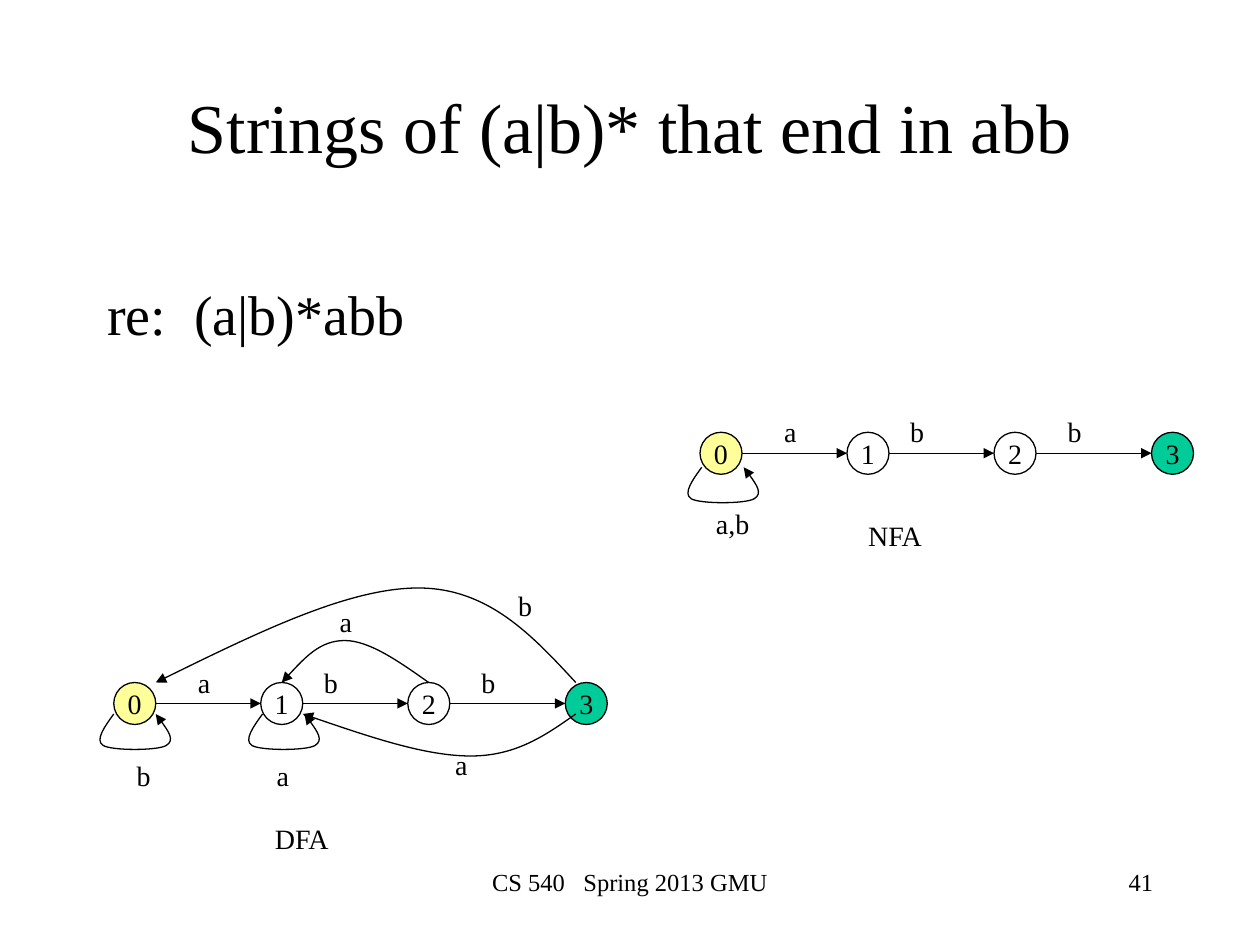
from lxml import etree
from pptx import Presentation
from pptx.dml.color import RGBColor
from pptx.enum import shapes, text
from pptx.oxml.ns import qn
from pptx.util import Pt

FONT = "Times New Roman"
STEPS = (0, 84, 168, 258)  # left edge of each state
SIZE = 24                  # diameter of a state
FILLS = ("FFFF99", None, None, "00CC99")
LOOP = ((0, 18), (-5, 25), (-11, 33), (-6, 36), (-1, 39),
        (25, 39), (30, 36), (35, 33), (29.5, 25), (24, 18))


def color(code):
    return RGBColor.from_string(code)


def style(frame, size, align=None):
    for para in frame.paragraphs:
        para.alignment = align
        for run in para.runs:
            run.font.name = FONT
            run.font.size = Pt(size)
            run.font.color.rgb = color("000000")


def label(slide, words, x, y, w=22, h=26.5, size=16, align=None, wrap=False):
    box = slide.shapes.add_textbox(Pt(x), Pt(y), Pt(w), Pt(h))
    frame = box.text_frame
    frame.text = words
    frame.word_wrap = wrap
    if not wrap:
        frame.auto_size = text.MSO_AUTO_SIZE.SHAPE_TO_FIT_TEXT
    style(frame, size, align)


def stroke(shape, arrow=True):
    shape.line.color.rgb = color("000000")
    shape.line.width = Pt(0.75)
    if arrow:
        line = shape.line._get_or_add_ln()
        etree.SubElement(line, qn("a:tailEnd"), type="triangle")


def state(slide, name, x, y, fill):
    dot = slide.shapes.add_shape(shapes.MSO_SHAPE.OVAL,
                                 Pt(x), Pt(y), Pt(SIZE), Pt(SIZE))
    dot.shadow.inherit = False
    if fill:
        dot.fill.solid()
        dot.fill.fore_color.rgb = color(fill)
    else:
        dot.fill.background()
    stroke(dot, arrow=False)
    frame = dot.text_frame
    frame.text = name
    frame.word_wrap = False
    frame.vertical_anchor = text.MSO_ANCHOR.MIDDLE
    style(frame, 16, text.PP_ALIGN.CENTER)


def edge(slide, x1, x2, y):
    line = slide.shapes.add_connector(shapes.MSO_CONNECTOR.STRAIGHT,
                                      Pt(x1), Pt(y), Pt(x2), Pt(y))
    stroke(line)
    etree.SubElement(line._element.spPr, qn("a:effectLst"))


def curve(slide, x, y, points):
    """Draw cubic Bezier pieces through a start and triples of points."""
    start, *rest = [(Pt(x + dx), Pt(y + dy)) for dx, dy in points]
    pen = slide.shapes.build_freeform(*start)
    pen.add_line_segments(rest, close=False)
    shape = pen.convert_to_shape()
    shape.shadow.inherit = False
    shape.fill.background()
    stroke(shape)
    lines = list(shape._element.iter(qn("a:lnTo")))
    for i in range(0, len(lines), 3):
        bend = etree.SubElement(lines[i].getparent(), qn("a:cubicBezTo"))
        for line in lines[i:i + 3]:
            bend.append(line[0])
            line.getparent().remove(line)


def arc(slide, x, y, start, peak, end, reach):
    """Curve from start to end that is level at its peak."""
    def mid(p, q):
        return (p[0] + q[0]) / 2, (p[1] + q[1]) / 2

    near, far = (peak[0] + reach, peak[1]), (peak[0] - reach, peak[1])
    curve(slide, x, y, (start, mid(start, near), near, peak,
                        far, mid(far, end), end))


def chain(slide, x, y):
    """Place the four states and the edges a, b, b that join them."""
    for i, (step, fill) in enumerate(zip(STEPS, FILLS)):
        state(slide, str(i), x + step, y, fill)
    for left, right in zip(STEPS, STEPS[1:]):
        edge(slide, x + left + SIZE, x + right, y + SIZE / 2)
    for word, dx in (("a", 41), ("b", 113), ("b", 203)):
        label(slide, word, x + dx, y - 13.5)


def dfa(slide, x, y):
    chain(slide, x, y)
    for word, dx, tx in (("b", 0, 6), ("a", 85, 86)):
        curve(slide, x + dx, y, LOOP)
        label(slide, word, x + tx, y + 40)
    for word, tx, ty, *bow in (
            ("a", 122, -48, (180, 0), (132, -24), (96, 0), 14),
            ("b", 224, -57, (264, 0), (174, -54), (24, 0), 40),
            ("a", 188, 33.5, (264, 18), (204, 42), (108, 18), 26)):
        arc(slide, x, y, *bow)
        label(slide, word, x + tx, y + ty)
    label(slide, "DFA", x + 85, y + 76, 46)


def nfa(slide, x, y):
    chain(slide, x, y)
    curve(slide, x + 1, y + 2, LOOP)
    label(slide, "a,b", x + 2, y + 39, 34)
    label(slide, "NFA", x + 89, y + 46, 46)


def place(shape, x, y, w, h):
    shape.left, shape.top, shape.width, shape.height = map(Pt, (x, y, w, h))


def heading(slide):
    title = slide.shapes.title
    place(title, 54, 48, 612, 90)
    frame = title.text_frame
    frame.text = "Strings of (a|b)* that end in abb"
    frame.vertical_anchor = text.MSO_ANCHOR.TOP
    frame.margin_top = 0
    style(frame, 40, text.PP_ALIGN.CENTER)


def body(slide):
    box = slide.placeholders[1]
    place(box, 54, 156, 612, 102)
    frame = box.text_frame
    frame.text = "re:  (a|b)*abb"
    style(frame, 32)
    para = frame.paragraphs[0]
    para.space_before = Pt(6.4)
    props = para._p.get_or_add_pPr()
    props.set("marL", str(Pt(27)))
    props.set("indent", str(Pt(-27)))
    etree.SubElement(props, qn("a:buNone"))


def footer(slide):
    label(slide, "CS 540   Spring 2013 GMU", 246, 492, 228, 36, 14,
          text.PP_ALIGN.CENTER, True)
    label(slide, "41", 516, 492, 150, 36, 14, text.PP_ALIGN.RIGHT, True)


def main():
    deck = Presentation()
    deck.slide_width, deck.slide_height = Pt(720), Pt(540)
    slide = deck.slides.add_slide(deck.slide_layouts[1])
    heading(slide)
    body(slide)
    footer(slide)
    dfa(slide, 65, 390)
    nfa(slide, 400, 247)
    deck.save("out.pptx")


if __name__ == "__main__":
    main()
